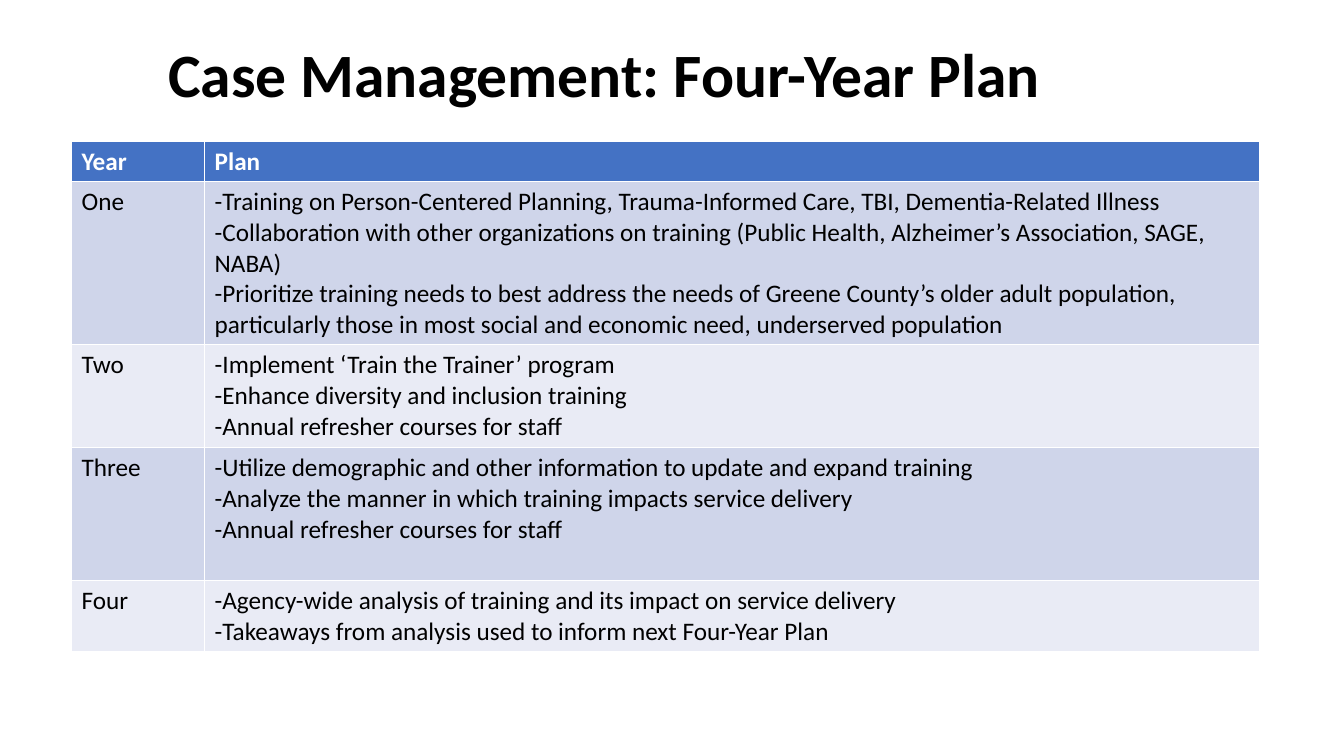
from dataclasses import dataclass

from pptx import Presentation
from pptx.dml.color import RGBColor
from pptx.enum.text import MSO_ANCHOR
from pptx.slide import Slide
from pptx.table import _Cell
from pptx.text.text import TextFrame
from pptx.util import Inches, Pt

WHITE = RGBColor(0xFF, 0xFF, 0xFF)
BLACK = RGBColor(0x00, 0x00, 0x00)
HEADER_BLUE = RGBColor(0x44, 0x72, 0xC4)
BAND_DARK = RGBColor(0xCF, 0xD5, 0xEA)
BAND_LIGHT = RGBColor(0xE9, 0xEB, 0xF5)
FONT_NAME = "Calibri"
COLUMN_WIDTHS = (1.32, 10.46)


@dataclass(frozen=True)
class PlanRow:
    year: str
    plan: tuple[str, ...]
    height: float


HEADER = PlanRow("Year", ("Plan",), 0.4)
YEARS = (
    PlanRow("One", (
        "-Training on Person-Centered Planning, Trauma-Informed Care, TBI, Dementia-Related Illness",
        "-Collaboration with other organizations on training "
        "(Public Health, Alzheimer’s Association, SAGE, NABA)",
        "-Prioritize training needs to best address the needs of Greene County’s older adult "
        "population, particularly those in most social and economic need, underserved population",
    ), 1.62),
    PlanRow("Two", (
        "-Implement ‘Train the Trainer’ program",
        "-Enhance diversity and inclusion training",
        "-Annual refresher courses for staff",
    ), 1.02),
    PlanRow("Three", (
        "-Utilize demographic and other information to update and expand training",
        "-Analyze the manner in which training impacts service delivery",
        "-Annual refresher courses for staff",
    ), 1.32),
    PlanRow("Four", (
        "-Agency-wide analysis of training and its impact on service delivery",
        "-Takeaways from analysis used to inform next Four-Year Plan",
    ), 0.7),
)


def write_lines(frame: TextFrame, lines: tuple[str, ...], size: int,
                color: RGBColor, bold: bool) -> None:
    frame.text = "\n".join(lines)
    for paragraph in frame.paragraphs:
        font = paragraph.font
        font.name = FONT_NAME
        font.size = Pt(size)
        font.bold = bold
        font.color.rgb = color


def fill_cell(cell: _Cell, lines: tuple[str, ...], fill: RGBColor, is_header: bool) -> None:
    cell.fill.solid()
    cell.fill.fore_color.rgb = fill
    write_lines(cell.text_frame, lines, 18, WHITE if is_header else BLACK, is_header)


def add_title(slide: Slide) -> None:
    title = slide.shapes.add_textbox(Inches(1.57), Inches(0), Inches(10.41), Inches(1.53))
    frame = title.text_frame
    frame.word_wrap = True
    frame.vertical_anchor = MSO_ANCHOR.MIDDLE
    write_lines(frame, ("Case Management: Four-Year Plan",), 44, BLACK, True)
    frame.paragraphs[0].line_spacing = 0.9


def add_plan_table(slide: Slide) -> None:
    rows = (HEADER, *YEARS)
    table = slide.shapes.add_table(
        len(rows), len(COLUMN_WIDTHS), Inches(0.71), Inches(1.4),
        Inches(sum(COLUMN_WIDTHS)), Inches(sum(row.height for row in rows)),
    ).table
    for column, width in zip(table.columns, COLUMN_WIDTHS):
        column.width = Inches(width)
    for index, row in enumerate(rows):
        table.rows[index].height = Inches(row.height)
        is_header = index == 0
        band = BAND_DARK if index % 2 else BAND_LIGHT
        fill = HEADER_BLUE if is_header else band
        fill_cell(table.cell(index, 0), (row.year,), fill, is_header)
        fill_cell(table.cell(index, 1), row.plan, fill, is_header)


def main() -> None:
    presentation = Presentation()
    presentation.slide_width = Inches(13.33)
    presentation.slide_height = Inches(7.5)
    slide = presentation.slides.add_slide(presentation.slide_layouts[6])
    add_title(slide)
    add_plan_table(slide)
    presentation.save("out.pptx")


if __name__ == "__main__":
    main()
